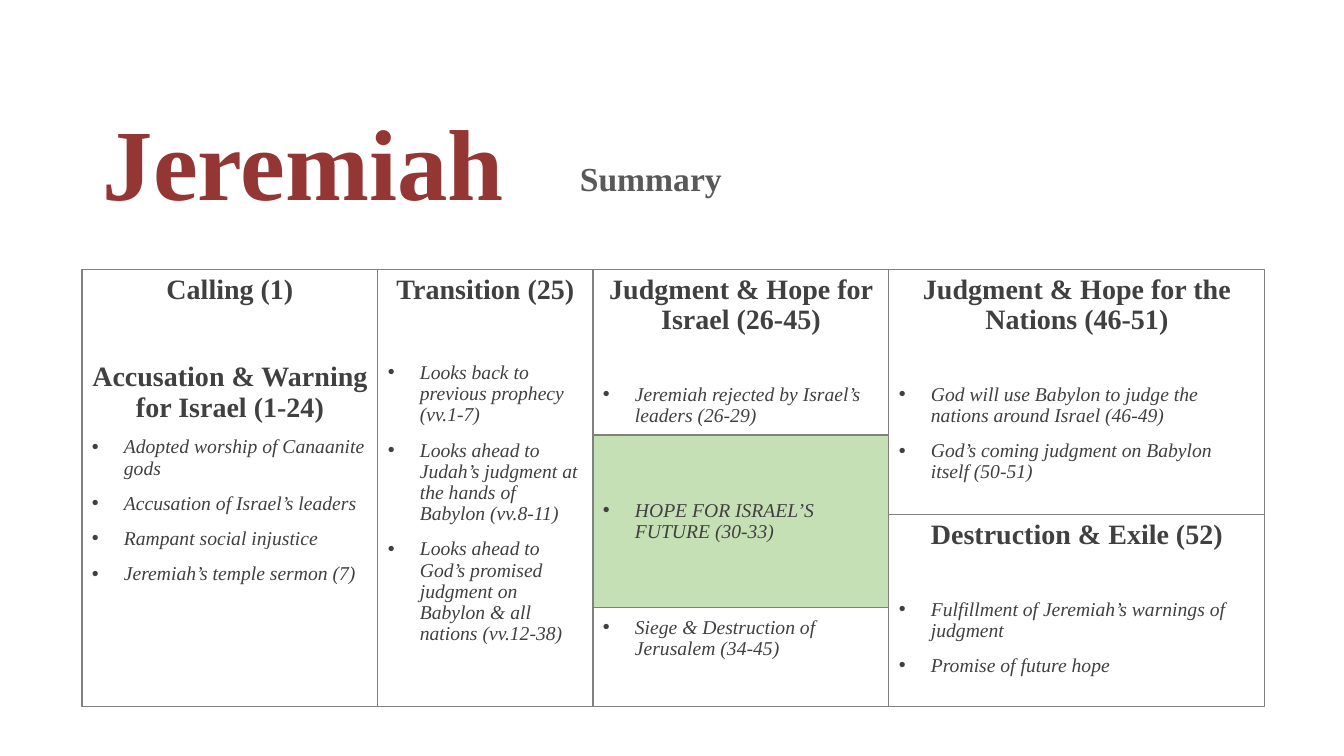
import pptx
import pptx.util
import pptx.dml.color
import pptx.enum.shapes
import pptx.enum.text
import lxml.etree

# Content: panels as (column, top row, bottom row, fill, lines)
# Each line is (style, text, points of space before)
FONT = "Times New Roman"
RED = pptx.dml.color.RGBColor(0x94, 0x36, 0x34)
GREY = pptx.dml.color.RGBColor(0x59, 0x59, 0x59)
DARK = pptx.dml.color.RGBColor(0x40, 0x40, 0x40)
BORDER = pptx.dml.color.RGBColor(0x80, 0x80, 0x80)
GREEN = pptx.dml.color.RGBColor(0xC5, 0xE0, 0xB4)

TITLE = "Jeremiah"
SUBTITLE = "Summary"
PANELS = [
    (0, "top", "bottom", None, [
        ("heading", "Calling (1)", 0),
        ("heading", "Accusation & Warning for Israel (1-24)", 41),
        ("bullet", "Adopted worship of Canaanite gods", 10),
        ("bullet", "Accusation of Israel’s leaders", 10),
        ("bullet", "Rampant social injustice", 10),
        ("bullet", "Jeremiah’s temple sermon (7)", 10),
    ]),
    (1, "top", "bottom", None, [
        ("heading", "Transition (25)", 0),
        ("bullet", "Looks back to previous prophecy (vv.1-7)", 41),
        ("bullet", "Looks ahead to Judah’s judgment at the hands of Babylon (vv.8-11)", 10),
        ("bullet", "Looks ahead to God’s promised judgment on Babylon & all nations (vv.12-38)", 10),
    ]),
    (2, "top", "bottom", None, [
        ("heading", "Judgment & Hope for Israel (26-45)", 0),
        ("bullet", "Jeremiah rejected by Israel’s leaders (26-29)", 35),
        ("bullet", "Siege & Destruction of Jerusalem (34-45)", 136),
    ]),
    (3, "top", "exile", None, [
        ("heading", "Judgment & Hope for the Nations (46-51)", 0),
        ("bullet", "God will use Babylon to judge the nations around Israel (46-49)", 35),
        ("bullet", "God’s coming judgment on Babylon itself (50-51)", 10),
    ]),
    (2, "hope", "hope end", GREEN, [
        ("bullet", "HOPE FOR ISRAEL’S FUTURE (30-33)", 0),
    ]),
    (3, "exile", "bottom", None, [
        ("heading", "Destruction & Exile (52)", 0),
        ("bullet", "Fulfillment of Jeremiah’s warnings of judgment", 35),
        ("bullet", "Promise of future hope", 10),
    ]),
]

# Layout in px
PX = 914400 / 100.8
COLUMN_EDGES = [82, 378, 593, 889, 1265]
ROW_EDGES = {"top": 270, "hope": 435, "exile": 515, "hope end": 608, "bottom": 707}
INDENT = 32


def px(length):
    return pptx.util.Emu(round(length * PX))


def style_text(para, size, colour, bold=False, italic=False):
    para.line_spacing = 0.9
    for span in para.runs:
        span.font.name = FONT
        span.font.size = pptx.util.Pt(size)
        span.font.bold = bold
        span.font.italic = italic
        span.font.color.rgb = colour


def add_bullet(para):
    properties = para._p.get_or_add_pPr()
    properties.set("marL", str(px(INDENT)))
    properties.set("indent", str(-px(INDENT)))
    namespace = "{http://schemas.openxmlformats.org/drawingml/2006/main}"
    lxml.etree.SubElement(properties, namespace + "buFont", typeface="Arial")
    lxml.etree.SubElement(properties, namespace + "buChar", char="•")


def add_label(page, text, place, size, colour, anchor):
    box = page.shapes.add_textbox(*map(px, place))
    frame = box.text_frame
    frame.word_wrap = True
    frame.vertical_anchor = anchor
    frame.text = text
    style_text(frame.paragraphs[0], size, colour, bold=True)


def add_panel(page, column, top, bottom, fill, lines):
    left, right = COLUMN_EDGES[column:column + 2]
    y, end = ROW_EDGES[top], ROW_EDGES[bottom]
    box = page.shapes.add_shape(pptx.enum.shapes.MSO_SHAPE.RECTANGLE,
                                px(left), px(y), px(right - left), px(end - y))
    box.shadow.inherit = False
    box.line.color.rgb = BORDER
    box.line.width = pptx.util.Pt(0.75)
    anchors = pptx.enum.text.MSO_ANCHOR
    if fill is None:
        box.fill.background()
    else:
        box.fill.solid()
        box.fill.fore_color.rgb = fill
    frame = box.text_frame
    frame.word_wrap = True
    frame.vertical_anchor = anchors.TOP if fill is None else anchors.MIDDLE
    frame.text = "\n".join(text for style, text, gap in lines)
    for para, (style, text, gap) in zip(frame.paragraphs, lines):
        para.space_before = pptx.util.Pt(gap)
        if style == "heading":
            para.alignment = pptx.enum.text.PP_ALIGN.CENTER
            style_text(para, 20, DARK, bold=True)
        else:
            para.alignment = pptx.enum.text.PP_ALIGN.LEFT
            style_text(para, 14, DARK, italic=True)
            add_bullet(para)


def main():
    deck = pptx.Presentation()
    deck.slide_width, deck.slide_height = px(1344), px(756)
    page = deck.slides.add_slide(deck.slide_layouts[6])

    # Title row
    add_label(page, TITLE, (93, 50, 433, 177), 72, RED, pptx.enum.text.MSO_ANCHOR.BOTTOM)
    add_label(page, SUBTITLE, (570, 158, 639, 48), 24, GREY, pptx.enum.text.MSO_ANCHOR.TOP)

    # Book sections
    for panel in PANELS:
        add_panel(page, *panel)

    deck.save("out.pptx")


if __name__ == "__main__":
    main()
